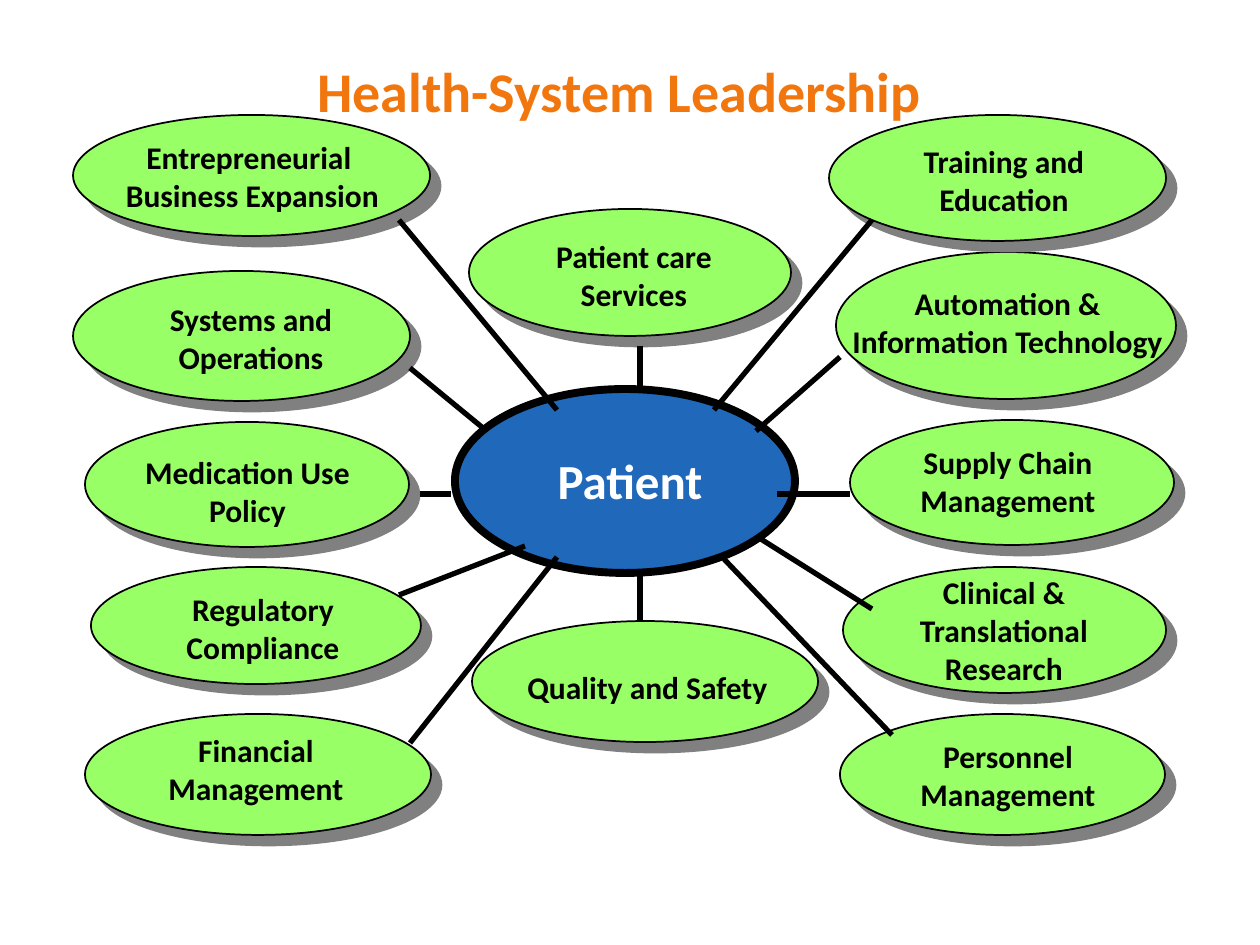
"""Build the health-system leadership hub-and-spoke slide."""
from typing import NamedTuple

from lxml import etree
from pptx import Presentation, util as u
from pptx.dml.color import RGBColor
from pptx.enum import shapes, text
from pptx.oxml.ns import qn

PX = u.Inches(1) / 126
FONT = "Calibri"
BLACK, GREEN, BLUE = "000000", "99FF66", "2068BA"
ORANGE, GREY, WHITE = "F2760E", "808080", "FFFFFF"


class Box(NamedTuple):
    left: int
    top: int
    width: int
    height: int


class Topic(NamedTuple):
    wording: str
    oval: Box
    label: Box


class Spoke(NamedTuple):
    x1: int
    y1: int
    x2: int
    y2: int


TOPICS = [
    Topic("Entrepreneurial \vBusiness Expansion", Box(73, 115, 357, 121), Box(53, 132, 399, 88)),
    Topic("Systems and Operations", Box(73, 271, 337, 130), Box(116, 294, 270, 88)),
    Topic("Medication Use Policy", Box(85, 422, 324, 125), Box(95, 447, 305, 88)),
    Topic("Regulatory Compliance", Box(91, 567, 330, 117), Box(116, 584, 294, 88)),
    Topic("Financial Management", Box(85, 714, 346, 121), Box(116, 725, 280, 88)),
    Topic("Patient care Services", Box(469, 209, 322, 127), Box(494, 231, 280, 88)),
    Topic("Quality and Safety", Box(472, 621, 346, 121), Box(494, 662, 307, 50)),
    Topic("Automation & Information Technology", Box(836, 252, 340, 147), Box(829, 278, 357, 89)),
    Topic("Training and Education", Box(829, 115, 337, 126), Box(864, 136, 280, 88)),
    Topic("Supply Chain Management", Box(850, 420, 324, 125), Box(882, 437, 252, 88)),
    Topic("Clinical & Translational Research", Box(843, 567, 323, 126), Box(864, 567, 280, 126)),
    Topic("Personnel Management", Box(840, 714, 325, 121), Box(882, 731, 252, 88)),
]

SPOKES = [
    Spoke(410, 368, 483, 428),
    Spoke(840, 357, 756, 431),
    Spoke(850, 494, 777, 494),
    Spoke(420, 494, 451, 494),
    Spoke(399, 595, 525, 546),
    Spoke(640, 620, 640, 570),
    Spoke(640, 346, 640, 388),
    Spoke(872, 609, 756, 536),
    Spoke(892, 735, 724, 559),
    Spoke(410, 743, 557, 557),
    Spoke(557, 410, 399, 220),
    Spoke(714, 410, 872, 220),
]


def emu(*lengths: int) -> list[int]:
    """Turn px lengths into EMU."""
    return [round(length * PX) for length in lengths]


def paint(colour_format, colour: str) -> None:
    """Set a colour from a hex string."""
    colour_format.rgb = RGBColor.from_string(colour)


def add_oval(slide, box: Box, fill: str, weight: float):
    """Draw a black-outlined ellipse without a shadow."""
    oval = slide.shapes.add_shape(shapes.MSO_SHAPE.OVAL, *emu(*box))
    oval.shadow.inherit = False
    oval.fill.solid()
    paint(oval.fill.fore_color, fill)
    paint(oval.line.color, BLACK)
    oval.line.width = u.Pt(weight)
    return oval


def cast_shadow(oval) -> None:
    """Give an ellipse a hard grey shadow to the lower right."""
    effects = oval._element.spPr.find(qn("a:effectLst"))
    shadow = etree.SubElement(effects, qn("a:outerShdw"), dist=str(u.Pt(8.5)),
                              dir="2700000", algn="ctr", rotWithShape="0")
    etree.SubElement(shadow, qn("a:srgbClr"), val=GREY)


def add_spoke(slide, spoke: Spoke) -> None:
    """Draw one line between the hub and a topic."""
    line = slide.shapes.add_connector(shapes.MSO_CONNECTOR.STRAIGHT, *emu(*spoke))
    paint(line.line.color, BLACK)
    line.line.width = u.Pt(3)
    etree.SubElement(line._element.spPr, qn("a:effectLst"))


def add_label(slide, wording: str, box: Box, size: int, colour: str,
              anchor=text.MSO_ANCHOR.TOP) -> None:
    """Write centred bold text in a wrapping text box."""
    frame = slide.shapes.add_textbox(*emu(*box)).text_frame
    frame.word_wrap = True
    frame.vertical_anchor = anchor
    paragraph = frame.paragraphs[0]
    paragraph.text = wording
    paragraph.alignment = text.PP_ALIGN.CENTER
    paragraph.font.name = FONT
    paragraph.font.size = u.Pt(size)
    paragraph.font.bold = True
    paint(paragraph.font.color, colour)


def main() -> None:
    """Build and save the slide."""
    deck = Presentation()
    deck.slide_width, deck.slide_height = u.Inches(10), u.Inches(7.5)
    slide = deck.slides.add_slide(deck.slide_layouts[6])
    for topic in TOPICS:
        cast_shadow(add_oval(slide, topic.oval, GREEN, 1))
    add_oval(slide, Box(455, 389, 340, 184), BLUE, 4.5)
    for spoke in SPOKES:
        add_spoke(slide, spoke)
    add_label(slide, "Patient", Box(441, 444, 378, 71), 28, WHITE)
    for topic in TOPICS:
        add_label(slide, topic.wording, topic.label, 18, BLACK)
    add_label(slide, "Health-System Leadership", Box(84, 32, 1071, 116), 32, ORANGE,
              text.MSO_ANCHOR.MIDDLE)
    deck.save("out.pptx")


if __name__ == "__main__":
    main()
